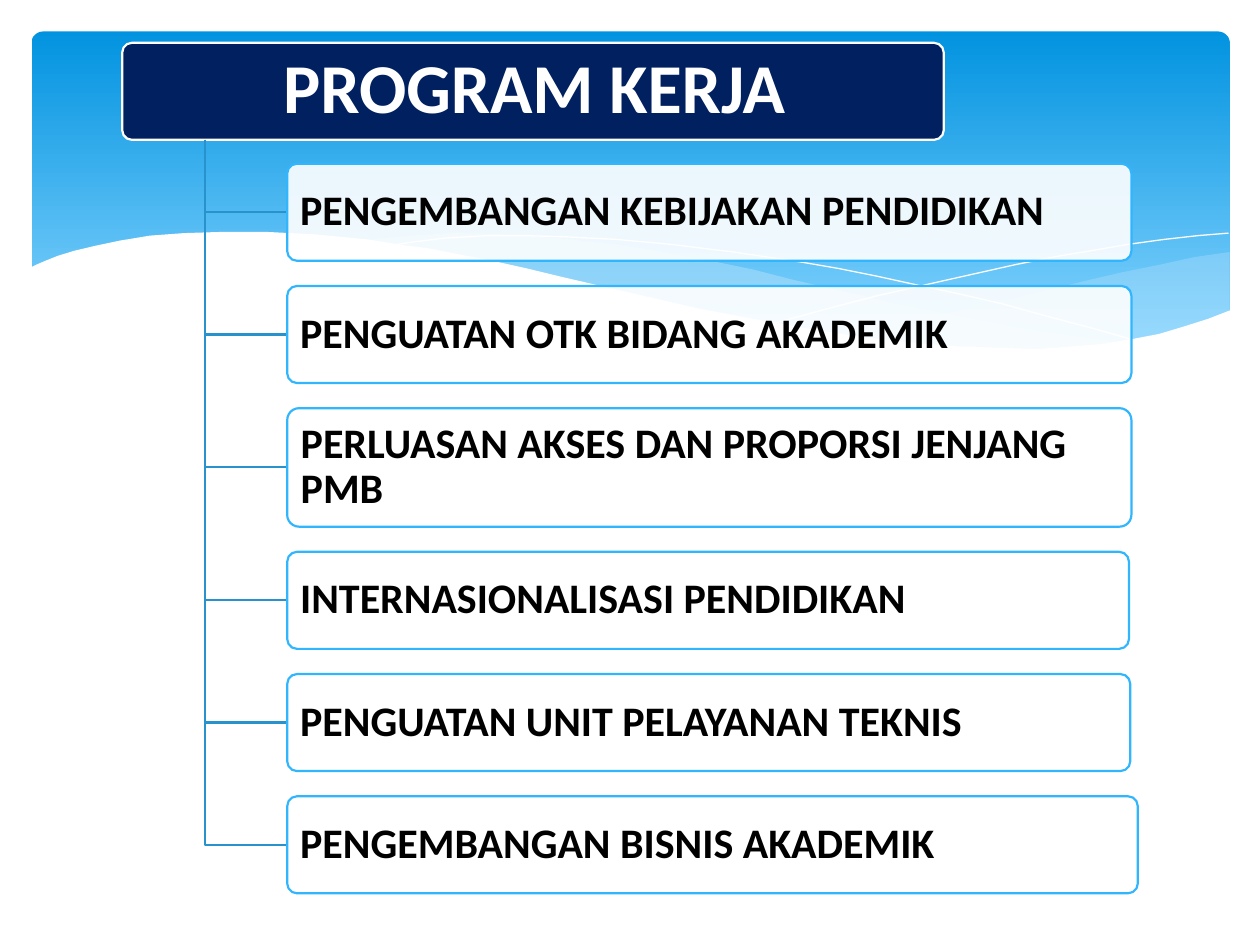
from lxml import etree
from pptx import Presentation
from pptx.dml.color import RGBColor
from pptx.enum import shapes, text
from pptx.oxml import ns
from pptx.util import Inches, Pt

TITLE = "PROGRAM KERJA"
PROGRAMS = [
    ("PENGEMBANGAN KEBIJAKAN PENDIDIKAN", 6.7, 0.77),
    ("PENGUATAN OTK BIDANG AKADEMIK", 6.7, 0.77),
    ("PERLUASAN AKSES DAN PROPORSI JENJANG PMB", 6.7, 0.94),
    ("INTERNASIONALISASI PENDIDIKAN", 6.68, 0.77),
    ("PENGUATAN UNIT PELAYANAN TEKNIS", 6.69, 0.77),
    ("PENGEMBANGAN BISNIS AKADEMIK", 6.75, 0.77),
]

WHITE = RGBColor(0xFF, 0xFF, 0xFF)
BLACK = RGBColor(0, 0, 0)
NAVY = RGBColor(0x00, 0x20, 0x60)
SKY_TOP = RGBColor(0x02, 0x93, 0xE0)
SKY_BOTTOM = RGBColor(0x83, 0xD3, 0xFE)
PALE = RGBColor(0xC6, 0xE7, 0xFC)
BORDER = RGBColor(0x31, 0xB6, 0xFD)
BRANCH = RGBColor(0x27, 0x92, 0xCB)

RIGHT_WAVE = [
    (9.76, 2), (9.48, 2.04), (9.21, 2.1), (8.91, 2.16), (8.61, 2.23), (8.05, 2.37),
    (7.53, 2.48), (7.06, 2.57), (6.61, 2.65), (6.91, 2.69), (7.19, 2.72), (7.45, 2.75),
    (7.69, 2.77), (8.03, 2.78), (8.35, 2.77), (8.63, 2.75), (8.89, 2.72), (9.13, 2.67),
    (9.35, 2.62), (9.49, 2.57), (9.63, 2.52), (9.76, 2.47),
]
MIDDLE_WAVE = [
    (8.93, 2.73), (8.66, 2.69), (8.37, 2.65), (8.07, 2.6), (7.75, 2.54), (7.41, 2.47),
    (7.06, 2.4), (6.68, 2.31), (6.29, 2.22), (5.98, 2.14), (5.69, 2.08), (5.41, 2.03),
    (5.14, 1.98), (4.89, 1.94), (4.42, 1.89), (3.99, 1.86), (3.61, 1.85), (3.28, 1.87),
    (2.86, 1.91), (3.23, 1.96), (3.62, 2.03), (4.04, 2.11), (4.49, 2.22), (4.91, 2.32),
    (5.3, 2.4), (5.66, 2.48), (6.01, 2.55), (6.34, 2.61), (6.65, 2.66), (6.95, 2.7),
    (7.22, 2.74), (7.48, 2.76), (7.73, 2.77), (7.96, 2.78), (8.28, 2.78), (8.57, 2.77),
    (8.76, 2.75), (8.93, 2.73),
]
FALLING_LINE = [
    (3.09, 1.95), (3.28, 1.92), (3.53, 1.89), (3.87, 1.87), (4.16, 1.87), (4.5, 1.88),
    (4.89, 1.9), (5.33, 1.94), (5.82, 2), (6.36, 2.08), (6.65, 2.13), (6.95, 2.19),
    (7.27, 2.26), (7.6, 2.33), (7.95, 2.41), (8.31, 2.51), (8.69, 2.61), (9.07, 2.72),
]
RISING_LINE = [
    (6.13, 2.57), (6.53, 2.46), (6.95, 2.35), (7.48, 2.23), (8.06, 2.1), (8.36, 2.04),
    (8.66, 1.99), (8.95, 1.94), (9.24, 1.9), (9.51, 1.87), (9.75, 1.85),
]
WHITE_WAVE = [
    (9.77, 2.46), (9.59, 2.53), (9.4, 2.59), (9.2, 2.65), (8.99, 2.69), (8.75, 2.73),
    (8.5, 2.75), (8.23, 2.77), (7.93, 2.76), (7.61, 2.75), (7.26, 2.72), (6.88, 2.68),
    (6.48, 2.62), (6.03, 2.54), (5.55, 2.45), (5.03, 2.33), (4.47, 2.2), (4.18, 2.13),
    (3.91, 2.07), (3.65, 2.02), (3.4, 1.97), (3.16, 1.94), (2.92, 1.9), (2.71, 1.88),
    (2.5, 1.86), (2.11, 1.84), (1.77, 1.84), (1.46, 1.85), (1.19, 1.87), (0.95, 1.91),
    (0.76, 1.95), (0.59, 1.99), (0.46, 2.03), (0.36, 2.07), (0.29, 2.1), (0.23, 2.13),
    (0.23, 3.29), (9.77, 3.29),
]

TRUNK_X, BOX_X, FIRST_Y, GAP = 1.63, 2.28, 1.3, 0.2
TITLE_BOX = (0.97, 0.34, 6.52, 0.77)
TRUNK_Y = TITLE_BOX[1] + TITLE_BOX[3]


def paint(sp, fill=None, alpha=100, line=None, width=1.25):
    sp.shadow.inherit = False
    if fill is None:
        sp.fill.background()
    else:
        sp.fill.solid()
        sp.fill.fore_color.rgb = fill
        if alpha < 100:
            color = sp.element.spPr.find(ns.qn("a:solidFill"))[0]
            etree.SubElement(color, ns.qn("a:alpha")).set("val", str(alpha * 1000))
    if line is None:
        sp.line.fill.background()
    else:
        sp.line.color.rgb = line
        sp.line.width = Pt(width)


def add_outline(s, points, closed, **style):
    pts = [(Inches(x), Inches(y)) for x, y in points]
    builder = s.shapes.build_freeform(*pts[0], scale=1.0)
    builder.add_line_segments(pts[1:], close=closed)
    paint(builder.convert_to_shape(), **style)


def add_round_box(s, place, radius):
    sp = s.shapes.add_shape(shapes.MSO_SHAPE.ROUNDED_RECTANGLE, *map(Inches, place))
    sp.adjustments[0] = radius
    return sp


def write(sp, words, size, color, align, inset_x, inset_y):
    tf = sp.text_frame
    tf.word_wrap = True
    tf.auto_size = text.MSO_AUTO_SIZE.NONE
    tf.vertical_anchor = text.MSO_ANCHOR.MIDDLE
    tf.margin_left = tf.margin_right = Inches(inset_x)
    tf.margin_top = tf.margin_bottom = Inches(inset_y)
    p = tf.paragraphs[0]
    p.alignment = align
    p.line_spacing = 0.9
    r = p.add_run()
    r.text = words
    r.font.name = "Calibri"
    r.font.size = Pt(size)
    r.font.bold = True
    r.font.color.rgb = color


def add_background(s):
    sky = add_round_box(s, (0.25, 0.25, 9.51, 2.7), 0.034)
    paint(sky)
    sky.fill.gradient()
    sky.fill.gradient_angle = 270
    for stop, color, at in zip(sky.fill.gradient_stops, (SKY_TOP, SKY_BOTTOM), (0, 0.9)):
        stop.color.rgb = color
        stop.position = at
    add_outline(s, RIGHT_WAVE, True, fill=PALE, alpha=29)
    add_outline(s, MIDDLE_WAVE, True, fill=PALE, alpha=40)
    for curve in (FALLING_LINE, RISING_LINE):
        add_outline(s, curve, False, line=WHITE, width=0)
    add_outline(s, WHITE_WAVE, True, fill=WHITE)


def add_title(s):
    paint(add_round_box(s, TITLE_BOX, 0.1), fill=NAVY, line=WHITE)
    title = s.shapes.title
    title.left, title.top, title.width, title.height = map(Inches, (1, 0.36, 6.48, 0.73))
    write(title, TITLE, 40, WHITE, text.PP_ALIGN.CENTER, 0.08, 0.06)
    s.shapes.element.append(title.element)


def add_programs(s):
    y = FIRST_Y
    for words, width, height in PROGRAMS:
        middle = y + height / 2
        branch = [(TRUNK_X, TRUNK_Y), (TRUNK_X, middle), (BOX_X, middle)]
        add_outline(s, branch, False, line=BRANCH)
        box = add_round_box(s, (BOX_X, y, width, height), 0.1)
        paint(box, fill=WHITE, alpha=90, line=BORDER)
        write(box, words, 24, BLACK, text.PP_ALIGN.LEFT, 0.08, 0.06)
        y += height + GAP


def main():
    prs = Presentation()
    prs.slide_width, prs.slide_height = Inches(10), Inches(7.5)
    s = prs.slides.add_slide(prs.slide_layouts[5])
    add_background(s)
    add_title(s)
    add_programs(s)
    prs.save("out.pptx")


if __name__ == "__main__":
    main()
